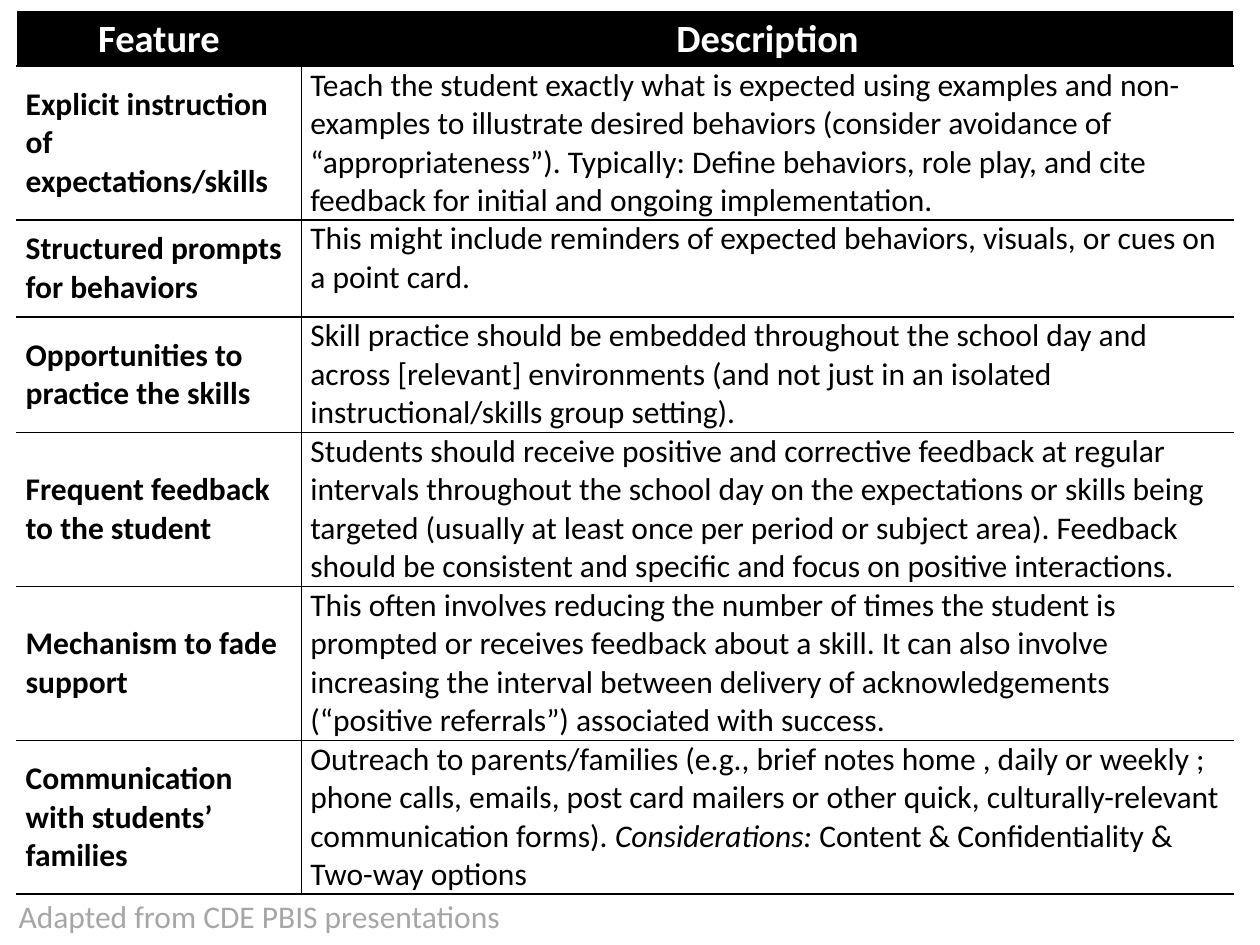
from lxml import etree
from pptx import Presentation
from pptx.dml.color import RGBColor
from pptx.enum import text
from pptx.oxml import ns
from pptx.util import Pt

BLACK = RGBColor(0x00, 0x00, 0x00)
WHITE = RGBColor(0xFF, 0xFF, 0xFF)
GRAY = RGBColor(0xA6, 0xA6, 0xA6)
FONT = "Calibri"

COL_WIDTHS = (162.7, 532.8)
ROW_HEIGHTS = (31, 87.5, 55.4, 66, 88, 88, 87.8)
HEADER = ("Feature", "Description")
FEATURES = [
    ("Explicit instruction of expectations/skills",
     ["Teach the student exactly what is expected using examples and non-examples to illustrate "
      "desired behaviors (consider avoidance of “appropriateness”). Typically: Define behaviors, "
      "role play, and cite feedback for initial and ongoing implementation."]),
    ("Structured prompts for behaviors",
     ["This might include reminders of expected behaviors, visuals, or cues on a point card."]),
    ("Opportunities to practice the skills",
     ["Skill practice should be embedded throughout the school day and across [relevant] "
      "environments (and not just in an isolated instructional/skills group setting)."]),
    ("Frequent feedback to the student",
     ["Students should receive positive and corrective feedback at regular intervals throughout "
      "the school day on the expectations or skills being targeted (usually at least once per "
      "period or subject area). Feedback should be consistent and specific and focus on positive "
      "interactions."]),
    ("Mechanism to fade support",
     ["This often involves reducing the number of times the student is prompted or receives "
      "feedback about a skill. It can also involve increasing the interval between delivery of "
      "acknowledgements (“positive referrals”) associated with success."]),
    ("Communication with students’ families",
     ["Outreach to parents/families (e.g., brief notes home , daily or weekly ; phone calls, "
      "emails, post card mailers or other quick, culturally-relevant communication forms). ",
      "Considerations: ",
      "Content & Confidentiality & Two-way options"]),
]


def set_font(p, size, color, bold=False):
    p.font.name = FONT
    p.font.size = Pt(size)
    p.font.bold = bold
    p.font.color.rgb = color


def add_borders(cell, sides):
    tc_pr = cell._tc.get_or_add_tcPr()
    for side in sides:
        ln = etree.SubElement(tc_pr, ns.qn(f"a:ln{side}"), w=str(Pt(1)))
        fill = etree.SubElement(ln, ns.qn("a:solidFill"))
        etree.SubElement(fill, ns.qn("a:srgbClr"), val=str(BLACK))


def fill_cell(cell, runs, sides, size=18, color=BLACK, back=WHITE, bold=False, middle=True):
    add_borders(cell, sides)
    cell.fill.solid()
    cell.fill.fore_color.rgb = back
    cell.margin_left = cell.margin_right = Pt(5.2)
    cell.margin_top = cell.margin_bottom = Pt(0)
    cell.vertical_anchor = text.MSO_ANCHOR.MIDDLE if middle else text.MSO_ANCHOR.TOP
    p = cell.text_frame.paragraphs[0]
    for i, words in enumerate(runs):
        r = p.add_run()
        r.text = words
        if i == 1:
            r.font.italic = True
    set_font(p, size, color, bold)
    return p


def add_feature_table(s):
    shape = s.shapes.add_table(len(ROW_HEIGHTS), len(COL_WIDTHS), Pt(9.5), Pt(6.8),
                               Pt(sum(COL_WIDTHS)), Pt(sum(ROW_HEIGHTS)))
    table = shape.table
    table.first_row = table.horz_banding = False
    for column, width in zip(table.columns, COL_WIDTHS):
        column.width = Pt(width)
    for row, height in zip(table.rows, ROW_HEIGHTS):
        row.height = Pt(height)
    for col, (title, sides) in enumerate(zip(HEADER, ("RTB", "LTB"))):
        p = fill_cell(table.cell(0, col), [title], sides, 22, WHITE, BLACK, bold=True)
        p.alignment = text.PP_ALIGN.CENTER
    for row, (feature, description) in enumerate(FEATURES, 1):
        fill_cell(table.cell(row, 0), [feature], "RTB", bold=True)
        fill_cell(table.cell(row, 1), description, "LTB", middle=False)


def add_credit(s, words):
    tf = s.shapes.add_textbox(Pt(3.6), Pt(509), Pt(360), Pt(29)).text_frame
    tf.word_wrap = True
    tf.auto_size = text.MSO_AUTO_SIZE.SHAPE_TO_FIT_TEXT
    p = tf.paragraphs[0]
    p.text = words
    set_font(p, 18, GRAY)


def main():
    prs = Presentation()
    prs.slide_width, prs.slide_height = Pt(720), Pt(540)
    s = prs.slides.add_slide(prs.slide_layouts[6])
    add_feature_table(s)
    add_credit(s, "Adapted from CDE PBIS presentations")
    prs.save("out.pptx")


if __name__ == "__main__":
    main()
